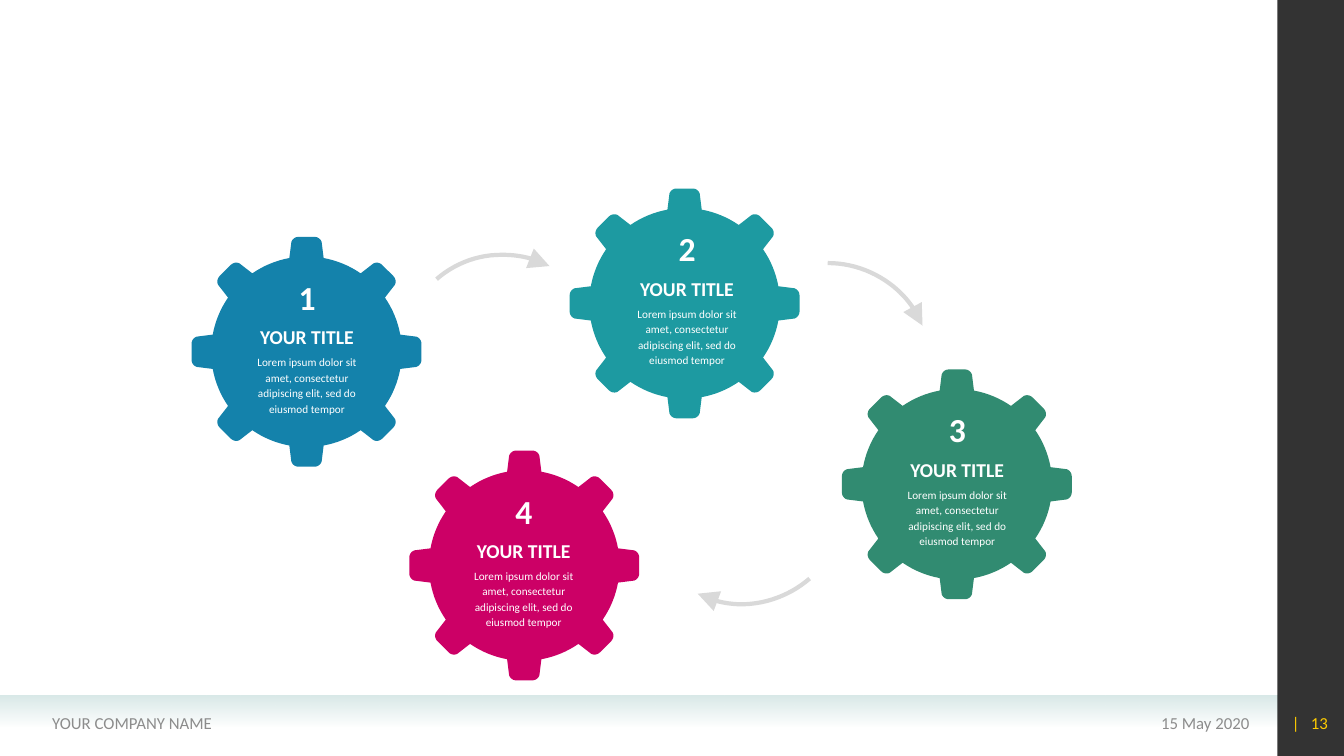
import math
from dataclasses import dataclass

from lxml import etree
from pptx import Presentation
from pptx.dml.color import RGBColor
from pptx.enum.shapes import MSO_SHAPE
from pptx.enum.text import MSO_ANCHOR, MSO_AUTO_SIZE, PP_ALIGN
from pptx.oxml.ns import qn
from pptx.util import Inches, Pt

LEFT, CENTER, RIGHT = PP_ALIGN.LEFT, PP_ALIGN.CENTER, PP_ALIGN.RIGHT
TOP, MIDDLE = MSO_ANCHOR.TOP, MSO_ANCHOR.MIDDLE
GROW = MSO_AUTO_SIZE.SHAPE_TO_FIT_TEXT
RECTANGLE = MSO_SHAPE.RECTANGLE
BLANK_LAYOUT = 6

Point = tuple[float, float]


@dataclass(frozen=True)
class Theme:
    font: str = "Calibri"
    white: str = "FFFFFF"
    arrow: str = "D9D9D9"
    band: str = "D9E9E8"
    sidebar: str = "000000"
    footer: str = "8C8C8C"
    page: str = "FFCC00"
    number_size: int = 24
    heading_size: int = 14
    footer_size: int = 12
    body_size: int = 8
    body_leading: int = 11
    arrow_width: int = 3


@dataclass(frozen=True)
class Gear:
    number: str
    center: Point
    label_x: float
    color: str


@dataclass(frozen=True)
class Label:
    text: str
    box: tuple[float, float, float, float]
    size: int
    color: str
    align: PP_ALIGN = CENTER
    anchor: MSO_ANCHOR = MIDDLE
    bold: bool = False
    wrap: bool = True
    grow: bool = False
    leading: int | None = None


THEME = Theme()
HEADING = "YOUR TITLE"
BODY = ("Lorem ipsum dolor sit amet, consectetur adipiscing elit, "
        "sed do eiusmod tempor")

GEARS = [
    Gear("1", (3.04, 3.49), 3.045, "1482AB"),
    Gear("2", (6.79, 3.01), 6.815, "1D9AA1"),
    Gear("3", (9.49, 4.805), 9.495, "318B71"),
    Gear("4", (5.2, 5.61), 5.195, "CC0066"),
]

# Each arrow is two Bezier pieces sharing their middle point
ARROWS = [
    [(4.33, 2.77), (4.49, 2.63), (4.7, 2.54), (4.92, 2.53),
     (5.1, 2.52), (5.28, 2.55), (5.45, 2.64)],
    [(8.21, 2.61), (8.43, 2.61), (8.64, 2.68), (8.82, 2.81),
     (8.97, 2.92), (9.08, 3.06), (9.15, 3.23)],
    [(8.03, 5.74), (7.87, 5.88), (7.66, 5.97), (7.45, 5.99),
     (7.26, 6.01), (7.08, 5.97), (6.92, 5.89)],
]

# Gear proportions, measured from its centre
TEETH = 8
TOOTH_BASE = (0.17, 0.93)
TOOTH_CORNER = [(0.15, 1.09), (0.14, 1.12), (0.11, 1.14), (0.08, 1.14)]

FOOTER = [
    Label("15 May 2020", (9.1, 6.97, 3.39, 0.4), THEME.footer_size, THEME.footer, RIGHT),
    Label("YOUR COMPANY NAME", (0.42, 6.97, 4.9, 0.4), THEME.footer_size, THEME.footer, LEFT),
    Label("|   13", (12.6, 6.97, 0.67, 0.4), THEME.footer_size, THEME.page, RIGHT),
]


def rgb(color: str) -> RGBColor:
    return RGBColor.from_string(color)


def set_alpha(shape, percent: int) -> None:
    """Give the last colour of the shape's fill an opacity."""
    color = list(shape.element.spPr.iter(qn("a:srgbClr")))[-1]
    etree.SubElement(color, qn("a:alpha"), val=str(percent * 1000))


def bezier(controls: list[Point], steps: int) -> list[Point]:
    a, b, c, d = controls
    curve = []
    for step in range(steps + 1):
        t = step / steps
        u = 1 - t
        weights = (u ** 3, 3 * u * u * t, 3 * u * t * t, t ** 3)
        curve.append(tuple(sum(w * p[axis] for w, p in zip(weights, (a, b, c, d)))
                           for axis in (0, 1)))
    return curve


def gear_outline(center: Point) -> list[Point]:
    """One tooth and the rim after it, repeated around the centre."""
    right = [TOOTH_BASE, *bezier(TOOTH_CORNER, 6)]
    tooth = [(-x, y) for x, y in right] + right[::-1]
    radius = math.hypot(*TOOTH_BASE)
    start = math.atan2(*TOOTH_BASE)
    pitch = math.tau / TEETH
    sweep = pitch - 2 * start
    rim = [(radius * math.sin(start + sweep * i / 8), radius * math.cos(start + sweep * i / 8))
           for i in range(1, 8)]
    outline = []
    for index in range(TEETH):
        cos, sin = math.cos(index * pitch), math.sin(index * pitch)
        outline += [(center[0] + x * cos + y * sin, center[1] + x * sin - y * cos)
                    for x, y in tooth + rim]
    return outline


def add_outline(slide, points: list[Point], closed: bool):
    first, *rest = [(Inches(x), Inches(y)) for x, y in points]
    builder = slide.shapes.build_freeform(*first)
    builder.add_line_segments(rest, close=closed)
    shape = builder.convert_to_shape()
    shape.shadow.inherit = False
    return shape


def add_label(slide, label: Label) -> None:
    frame = slide.shapes.add_textbox(*map(Inches, label.box)).text_frame
    frame.text = label.text
    frame.word_wrap = label.wrap
    frame.vertical_anchor = label.anchor
    if label.grow:
        frame.auto_size = GROW
    paragraph = frame.paragraphs[0]
    paragraph.alignment = label.align
    if label.leading:
        paragraph.line_spacing = Pt(label.leading)
    font = paragraph.runs[0].font
    font.name, font.size, font.bold = THEME.font, Pt(label.size), label.bold
    font.color.rgb = rgb(label.color)


def add_panel(slide, left: float, top: float, width: float, height: float):
    panel = slide.shapes.add_shape(RECTANGLE, *map(Inches, (left, top, width, height)))
    panel.shadow.inherit = False
    panel.line.fill.background()
    return panel


def add_background(slide) -> None:
    band = add_panel(slide, 0, 6.9, 12.67, 0.31)
    band.fill.gradient()
    band.fill.gradient_angle = 270
    for stop in band.fill.gradient_stops:
        stop.color.rgb = rgb(THEME.band)
    set_alpha(band, 0)
    sidebar = add_panel(slide, 12.67, 0, 0.67, 7.5)
    sidebar.fill.solid()
    sidebar.fill.fore_color.rgb = rgb(THEME.sidebar)
    set_alpha(sidebar, 80)


def add_arrow(slide, controls: list[Point]) -> None:
    curve = bezier(controls[:4], 12) + bezier(controls[3:], 12)[1:]
    arrow = add_outline(slide, curve, closed=False)
    arrow.fill.background()
    arrow.line.color.rgb = rgb(THEME.arrow)
    arrow.line.width = Pt(THEME.arrow_width)
    etree.SubElement(arrow.element.spPr.find(qn("a:ln")), qn("a:tailEnd"),
                     type="triangle", w="lg", len="lg")


def add_gear(slide, gear: Gear) -> None:
    wheel = add_outline(slide, gear_outline(gear.center), closed=True)
    wheel.fill.solid()
    wheel.fill.fore_color.rgb = rgb(gear.color)
    wheel.line.fill.background()
    x, y = gear.label_x, gear.center[1]
    add_label(slide, Label(gear.number, (x - 0.19, y - 0.79, 0.38, 0.49), THEME.number_size,
                           THEME.white, bold=True, wrap=False, grow=True))
    add_label(slide, Label(HEADING, (x - 0.6, y - 0.32, 1.2, 0.34), THEME.heading_size,
                           THEME.white, bold=True, wrap=False, grow=True))
    add_label(slide, Label(BODY, (x - 0.675, y - 0.03, 1.35, 0.7), THEME.body_size,
                           THEME.white, anchor=TOP, grow=True, leading=THEME.body_leading))


def main() -> None:
    deck = Presentation()
    deck.slide_width, deck.slide_height = Inches(13.33), Inches(7.5)
    slide = deck.slides.add_slide(deck.slide_layouts[BLANK_LAYOUT])
    add_background(slide)
    for label in FOOTER:
        add_label(slide, label)
    for controls in ARROWS:
        add_arrow(slide, controls)
    for gear in GEARS:
        add_gear(slide, gear)
    deck.save("out.pptx")


if __name__ == "__main__":
    main()
